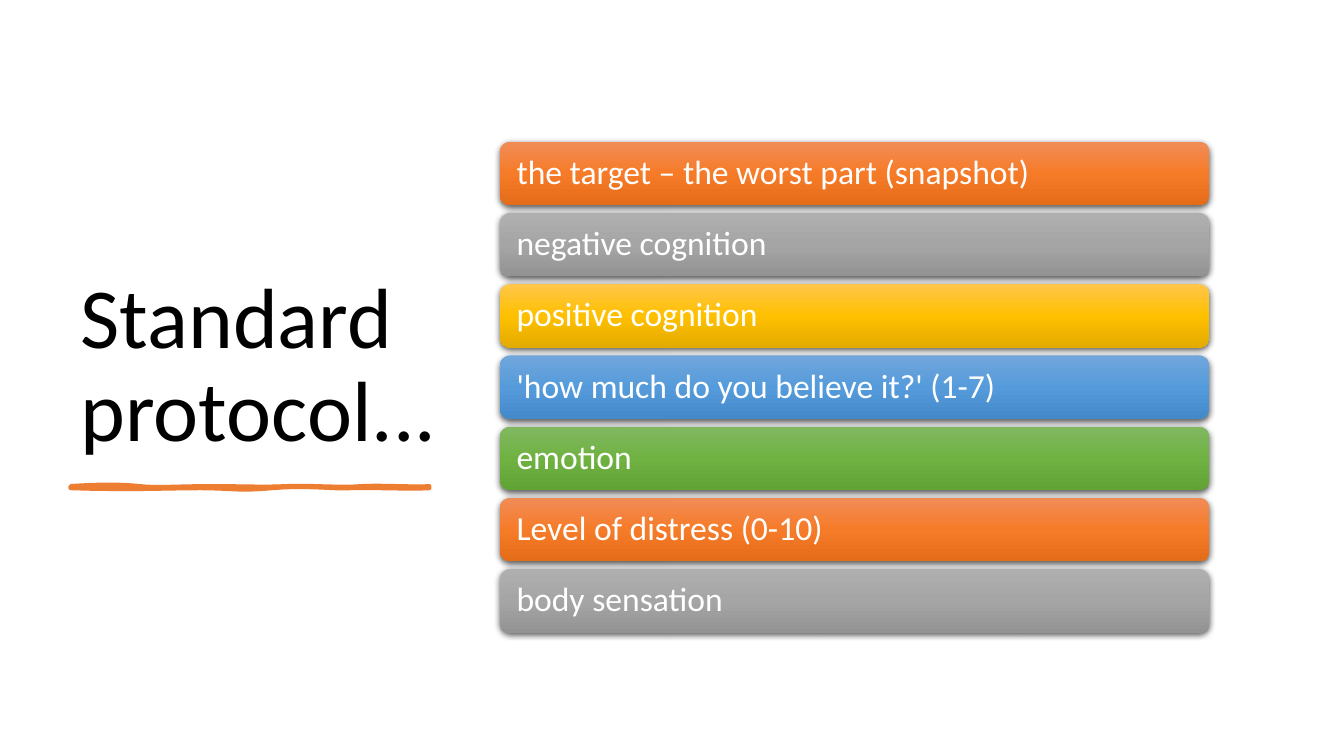
from copy import deepcopy
from dataclasses import dataclass

from lxml.etree import SubElement
from pptx import Presentation
from pptx.dml.color import RGBColor
from pptx.enum.shapes import MSO_SHAPE as Shape
from pptx.enum.text import MSO_ANCHOR as Anchor, MSO_AUTO_SIZE as AutoSize, PP_ALIGN as Align
from pptx.oxml.ns import qn
from pptx.util import Cm, Pt


@dataclass(frozen=True)
class Theme:
    font: str = "Calibri"
    title_size: int = 61
    step_size: int = 24
    title: str = "000000"
    step_text: str = "FFFFFF"
    accent: str = "ED7D31"
    shadow: str = "000000"
    # Top, middle and bottom colour of each bar, used in turn
    gradients: tuple = (
        ("F18C57", "F67B28", "E56C19"),
        ("AFAFAF", "A5A5A5", "939393"),
        ("FFC64B", "FFC000", "E3AB00"),
        ("71A6DB", "559BDB", "448ACA"),
        ("81B861", "6FB242", "62A336"),
    )


THEME = Theme()

STEPS = (
    "the target – the worst part (snapshot)",
    "negative cognition",
    "positive cognition",
    "'how much do you believe it?' (1-7)",
    "emotion",
    "Level of distress (0-10)",
    "body sensation",
)

# Brush stroke in cm from its left end: two control points and an end point per curve
BRUSH_CURVES = (
    ((0.69, -0.05), (1.3, -0.05), (1.73, 0)),
    ((2.16, 0.05), (2.72, 0), (3.53, 0)),
    ((4.34, 0), (4.83, 0.03), (5.44, 0)),
    ((6.05, -0.03), (6.83, 0.05), (7.34, 0)),
    ((7.85, -0.03), (8.69, 0.03), (9.04, 0)),
    ((9.04, 0.03), (9.04, 0.05), (9.04, 0.05)),
    ((8.59, 0.08), (7.47, 0.03), (7.06, 0.05)),
    ((6.65, 0.08), (5.94, -0.03), (5.08, 0.05)),
    ((4.19, 0.13), (4.09, 0.05), (3.28, 0.05)),
    ((2.44, 0.05), (1.57, 0.1), (0, 0.05)),
)


def format_text(text_frame, size, color):
    paragraph = text_frame.paragraphs[0]
    paragraph.alignment = Align.LEFT
    paragraph.line_spacing = 0.9
    font = paragraph.runs[0].font
    font.name = THEME.font
    font.size = Pt(size)
    font.color.rgb = RGBColor.from_string(color)


def add_title(slide, left, top, width, height):
    title = slide.shapes.title
    title.left, title.top, title.width, title.height = left, top, width, height
    text_frame = title.text_frame
    text_frame.text = "Standard protocol..."
    text_frame.word_wrap = True
    text_frame.auto_size = AutoSize.NONE
    text_frame.vertical_anchor = Anchor.BOTTOM
    format_text(text_frame, THEME.title_size, THEME.title)


def curve_points(start, curves, samples=8):
    """Return points along a chain of cubic Bézier curves."""
    points = []
    for control_1, control_2, end in curves:
        for step in range(1, samples + 1):
            t = step / samples
            u = 1 - t
            points.append(tuple(
                u**3 * a + 3 * u**2 * t * b + 3 * u * t**2 * c + t**3 * d
                for a, b, c, d in zip(start, control_1, control_2, end)
            ))
        start = end
    return points


def add_brush_stroke(slide, left, top):
    builder = slide.shapes.build_freeform(left, top)
    points = curve_points((0, 0), BRUSH_CURVES)
    builder.add_line_segments([(left + Cm(x), top + Cm(y)) for x, y in points], close=True)
    stroke = builder.convert_to_shape()
    stroke.shadow.inherit = False
    stroke.fill.solid()
    stroke.fill.fore_color.rgb = RGBColor.from_string(THEME.accent)
    stroke.line.color.rgb = RGBColor.from_string(THEME.accent)
    stroke.line.width = Pt(3)


def fill_gradient(shape, colors):
    """Fill the shape from top to bottom with three evenly spaced colours."""
    shape.fill.gradient()
    shape.fill.gradient_angle = 270
    stop_list = shape.element.spPr.find(".//" + qn("a:gsLst"))
    stop_list.append(deepcopy(stop_list[0]))
    for index, (stop, color) in enumerate(zip(shape.fill.gradient_stops, colors)):
        stop.position = index / 2
        stop.color.rgb = RGBColor.from_string(color)


def add_shadow(shape):
    shape.shadow.inherit = False
    effects = shape.element.spPr.find(qn("a:effectLst"))
    shadow = SubElement(effects, qn("a:outerShdw"), blurRad=str(Pt(4.5)),
                        dist=str(Pt(1.5)), dir="5400000", algn="ctr", rotWithShape="0")
    color = SubElement(shadow, qn("a:srgbClr"), val=THEME.shadow)
    SubElement(color, qn("a:alpha"), val="63000")


def add_steps(slide, left, top, width, height):
    bar_height = Cm(1.6)
    pitch = (height - bar_height) / (len(STEPS) - 1)
    for index, step in enumerate(STEPS):
        bar = slide.shapes.add_shape(Shape.ROUNDED_RECTANGLE, left,
                                     top + round(index * pitch), width, bar_height)
        fill_gradient(bar, THEME.gradients[index % len(THEME.gradients)])
        bar.line.fill.background()
        add_shadow(bar)
        text_frame = bar.text_frame
        text_frame.text = step
        text_frame.word_wrap = True
        text_frame.vertical_anchor = Anchor.MIDDLE
        text_frame.margin_left = text_frame.margin_right = Cm(0.34)
        format_text(text_frame, THEME.step_size, THEME.step_text)


def main():
    presentation = Presentation()
    presentation.slide_width, presentation.slide_height = Cm(33.87), Cm(19.05)
    slide = presentation.slides.add_slide(presentation.slide_layouts[5])
    add_title(slide, Cm(1.78), Cm(1.78), Cm(9.93), Cm(9.93))
    add_brush_stroke(slide, Cm(1.78), Cm(12.25))
    add_steps(slide, Cm(12.6), Cm(3.57), Cm(17.88), Cm(12.37))
    presentation.save("out.pptx")


if __name__ == "__main__":
    main()
